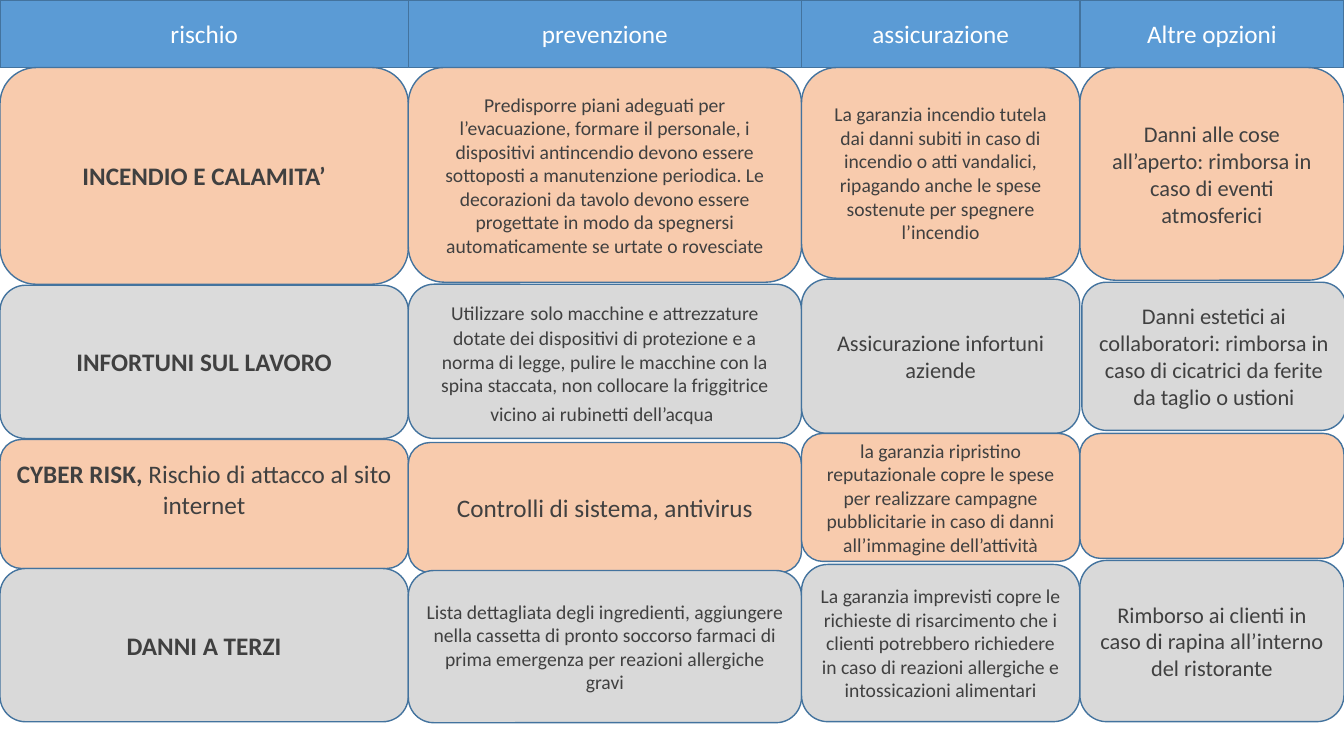
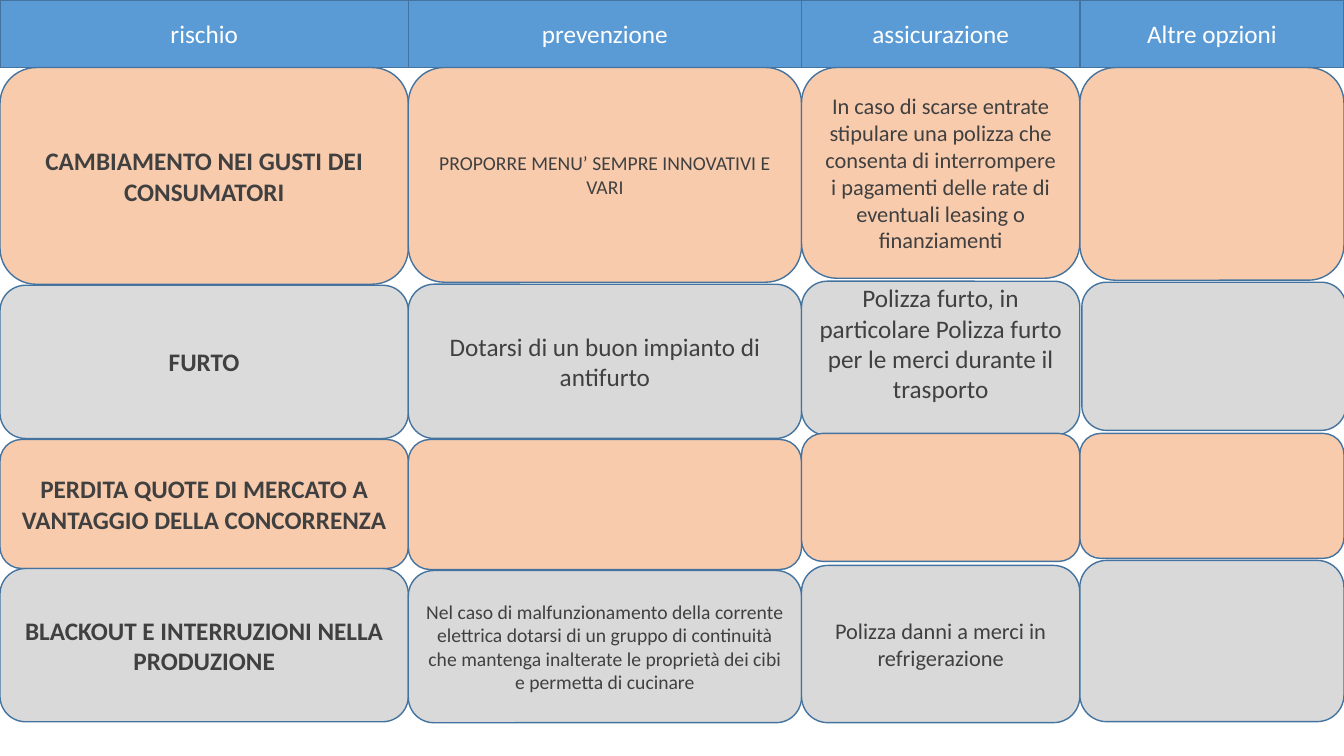
from dataclasses import dataclass
from itertools import pairwise

from pptx import Presentation
from pptx import util as u
from pptx.dml.color import RGBColor
from pptx.enum import shapes, text


@dataclass(frozen=True)
class Theme:
    """Colours, font and type sizes shared by both slides."""
    font: str = "Calibri"
    header: str = "5B9BD5"
    outline: str = "43739E"
    peach: str = "F8CBAD"
    grey: str = "D9D9D9"
    light_grey: str = "DBDBDB"
    white: str = "FFFFFF"
    ink: str = "404040"
    large: int = 18
    medium: int = 16
    small: int = 14


@dataclass(frozen=True)
class Cell:
    """Wording of one cell as (text, size, bold) phrases, with its small offsets."""
    phrases: tuple = ()
    lower: float = 0
    bottom_inset: float = 0.05


THEME = Theme()
SLIDE_WIDTH, SLIDE_HEIGHT = 13.33, 7.5
HEADER_HEIGHT = 0.67
COLUMN_EDGES = (0, 4.05, 7.95, 10.71, SLIDE_WIDTH)
COLUMNS = [(left, right - left) for left, right in pairwise(COLUMN_EDGES)]
HEADINGS = ("rischio", "prevenzione", "assicurazione", "Altre opzioni")
ROW_SPANS = (
    ((0.67, 2.15), (0.67, 2.13), (0.67, 2.09), (0.67, 2.11)),
    ((2.83, 1.52), (2.82, 1.53), (2.77, 1.53), (2.80, 1.47)),
    ((4.36, 1.28), (4.36, 1.29), (4.30, 1.27), (4.30, 1.24)),
    ((5.64, 1.52), (5.66, 1.51), (5.60, 1.56), (5.56, 1.60)),
)
ROW_FILLS = (THEME.peach, THEME.grey, THEME.peach, THEME.grey)
FILL_EXCEPTIONS = {(1, 0): THEME.light_grey}
INDENTS = {(1, 3): 0.02}


def risk(name):
    """Return a cell naming a risk in bold."""
    return Cell(((name, THEME.large, True),))


def plain(wording, size=THEME.small, **offsets):
    """Return a cell with one run of regular text."""
    return Cell(((wording, size, False),), **offsets)


FIRST_RISKS = (
    (
        risk("INCENDIO E CALAMITA’"),
        plain("Predisporre piani adeguati per l’evacuazione, formare il personale, i "
              "dispositivi antincendio devono essere sottoposti a manutenzione periodica. "
              "Le decorazioni da tavolo devono essere progettate in modo da spegnersi "
              "automaticamente se urtate o rovesciate"),
        plain("La garanzia incendio tutela dai danni subiti in caso di incendio o atti "
              "vandalici, ripagando anche le spese sostenute per spegnere l’incendio"),
        plain("Danni alle cose all’aperto: rimborsa in caso di eventi atmosferici",
              THEME.medium),
    ),
    (
        risk("INFORTUNI SUL LAVORO"),
        Cell((
            ("Utilizzare", THEME.small, False),
            (" ", THEME.large, False),
            ("solo macchine e attrezzature dotate dei dispositivi di protezione e a norma "
             "di legge, pulire le macchine con la spina staccata, non collocare la "
             "friggitrice vicino ai rubinetti dell’acqua", THEME.small, False),
            (" ", THEME.large, False),
        )),
        plain("Assicurazione infortuni aziende", THEME.medium),
        plain("Danni estetici ai collaboratori: rimborsa in caso di cicatrici da ferite "
              "da taglio o ustioni", THEME.medium),
    ),
    (
        Cell((("CYBER RISK, ", THEME.large, True),
              ("Rischio di attacco al sito internet", THEME.large, False)),
             bottom_inset=0.35),
        plain("Controlli di sistema, antivirus", THEME.large, lower=0.03),
        plain("la garanzia ripristino reputazionale copre le spese per realizzare "
              "campagne pubblicitarie in caso di danni all’immagine dell’attività"),
        Cell(),
    ),
    (
        risk("DANNI A TERZI"),
        plain("Lista dettagliata degli ingredienti, aggiungere nella cassetta di pronto "
              "soccorso farmaci di prima emergenza per reazioni allergiche gravi"),
        plain("La garanzia imprevisti copre le richieste di risarcimento che i clienti "
              "potrebbero richiedere in caso di reazioni allergiche e intossicazioni "
              "alimentari"),
        plain("Rimborso ai clienti in caso di rapina all’interno del ristorante",
              THEME.medium),
    ),
)

SECOND_RISKS = (
    (
        risk("CAMBIAMENTO NEI GUSTI DEI CONSUMATORI"),
        plain("PROPORRE MENU’ SEMPRE INNOVATIVI E VARI"),
        plain("In caso di scarse entrate stipulare una polizza che consenta di "
              "interrompere i pagamenti delle rate di eventuali leasing o finanziamenti",
              THEME.medium),
        Cell(),
    ),
    (
        risk("FURTO"),
        plain("Dotarsi di un buon impianto di antifurto", THEME.large),
        plain("Polizza furto, in particolare Polizza furto per le merci durante il "
              "trasporto", THEME.large, lower=0.02, bottom_inset=0.35),
        Cell(),
    ),
    (
        risk("PERDITA QUOTE DI MERCATO A VANTAGGIO DELLA CONCORRENZA"),
        Cell(),
        Cell(),
        Cell(),
    ),
    (
        risk("BLACKOUT E INTERRUZIONI NELLA PRODUZIONE"),
        plain("Nel caso di malfunzionamento della corrente elettrica dotarsi di un "
              "gruppo di continuità che mantenga inalterate le proprietà dei cibi e "
              "permetta di cucinare"),
        plain("Polizza danni a merci in refrigerazione", THEME.medium, lower=0.01),
        Cell(),
    ),
)


def add_box(slide, kind, bounds, fill, cell, ink):
    """Draw one outlined box and write the cell's wording in it."""
    box = slide.shapes.add_shape(kind, *(u.Inches(length) for length in bounds))
    box.shadow.inherit = False
    box.fill.solid()
    box.fill.fore_color.rgb = RGBColor.from_string(fill)
    box.line.color.rgb = RGBColor.from_string(THEME.outline)
    box.line.width = u.Pt(1)
    frame = box.text_frame
    frame.word_wrap = True
    frame.vertical_anchor = text.MSO_ANCHOR.MIDDLE
    frame.margin_bottom = u.Inches(cell.bottom_inset)
    paragraph = frame.paragraphs[0]
    paragraph.alignment = text.PP_ALIGN.CENTER
    for wording, size, bold in cell.phrases:
        run = paragraph.add_run()
        run.text = wording
        run.font.name = THEME.font
        run.font.size = u.Pt(size)
        run.font.bold = bold
        run.font.color.rgb = RGBColor.from_string(ink)


def add_headings(slide):
    """Draw the band of column headings."""
    for (left, width), heading in zip(COLUMNS, HEADINGS):
        add_box(slide, shapes.MSO_SHAPE.FLOWCHART_PROCESS,
                (left, 0, width, HEADER_HEIGHT), THEME.header,
                plain(heading, THEME.large), THEME.white)


def add_risks(slide, risks):
    """Draw the rounded cells row by row."""
    for row, cells in enumerate(risks):
        for column, cell in enumerate(cells):
            left, width = COLUMNS[column]
            top, height = ROW_SPANS[row][column]
            place = (row, column)
            add_box(slide, shapes.MSO_SHAPE.ROUNDED_RECTANGLE,
                    (left + INDENTS.get(place, 0), top + cell.lower, width, height),
                    FILL_EXCEPTIONS.get(place, ROW_FILLS[row]), cell, THEME.ink)


def main():
    """Build both risk slides and save them."""
    deck = Presentation()
    deck.slide_width = u.Inches(SLIDE_WIDTH)
    deck.slide_height = u.Inches(SLIDE_HEIGHT)
    blank = deck.slide_layouts.get_by_name("Blank")
    for risks in (FIRST_RISKS, SECOND_RISKS):
        slide = deck.slides.add_slide(blank)
        add_headings(slide)
        add_risks(slide, risks)
    deck.save("out.pptx")


if __name__ == "__main__":
    main()
